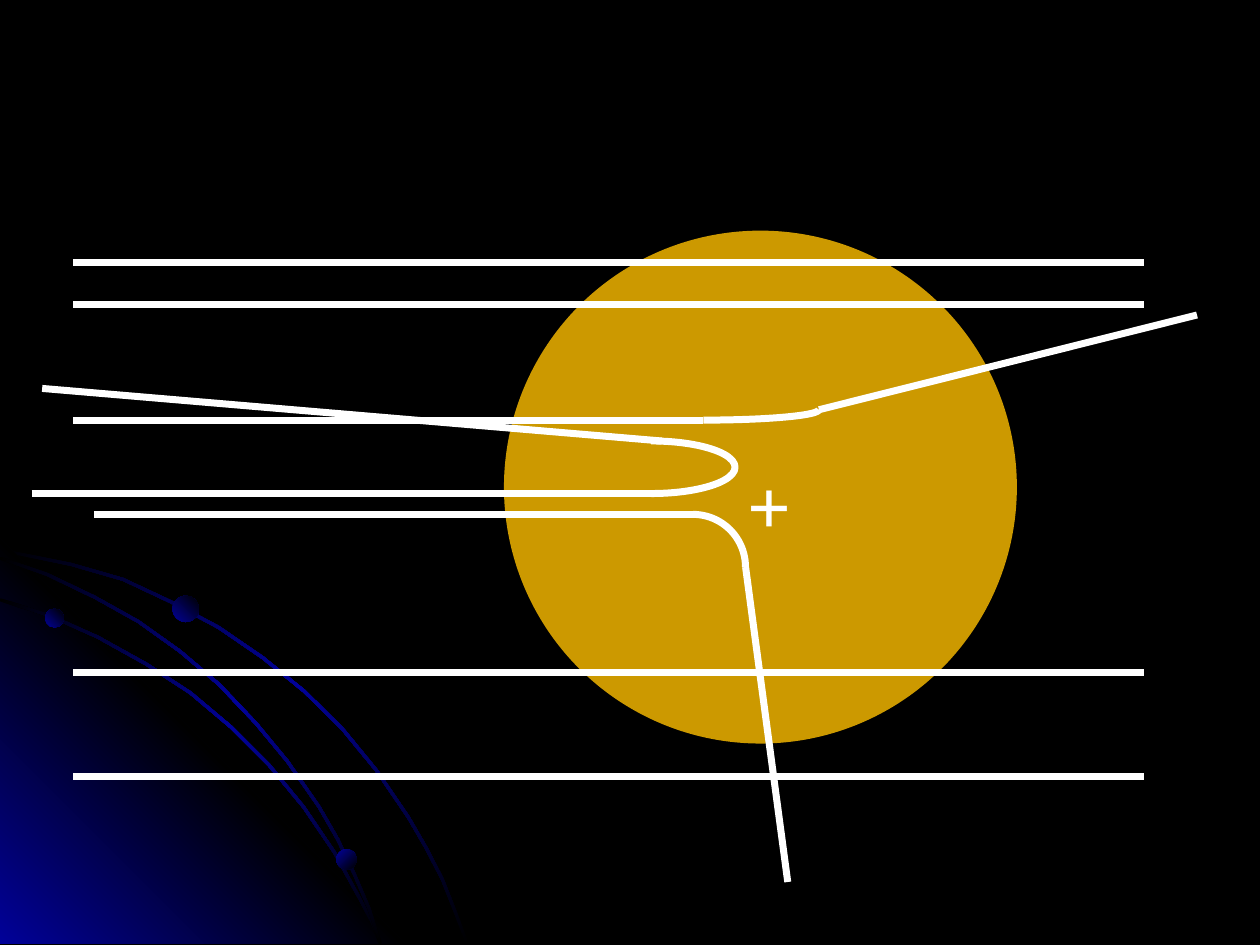
"""Charged particle paths through a positive sphere, drawn on a dark orbit background."""
from dataclasses import dataclass
from math import hypot

from lxml.etree import SubElement
from pptx import Presentation
from pptx.dml.color import RGBColor
from pptx.enum.shapes import MSO_CONNECTOR, MSO_SHAPE
from pptx.enum.text import MSO_ANCHOR, PP_ALIGN
from pptx.oxml.ns import qn
from pptx.util import Cm, Pt


@dataclass(frozen=True)
class Theme:
    black: str = "000000"
    blue: str = "010199"
    gold: str = "CC9900"
    white: str = "FFFFFF"
    font: str = "Times New Roman"
    sign_size: int = 44
    path_width: int = 4


class Sketch:
    def __init__(self, slide, theme):
        self.s = slide
        self.theme = theme

    def background(self, color):
        fill = self.s.background.fill
        fill.solid()
        fill.fore_color.rgb = RGBColor.from_string(color)

    def solid(self, sp, color):
        sp.shadow.inherit = False
        sp.line.fill.background()
        sp.fill.solid()
        sp.fill.fore_color.rgb = RGBColor.from_string(color)

    def gradient(self, sp, colors, angle):
        sp.shadow.inherit = False
        sp.line.fill.background()
        sp.fill.gradient()
        sp.fill.gradient_angle = 360 - angle
        stops = next(sp._element.iter(qn("a:gsLst")))
        for gs in list(stops):
            stops.remove(gs)
        for i, color in enumerate(colors):
            pos = 100000 * i // (len(colors) - 1)
            gs = SubElement(stops, qn("a:gs"), pos=str(pos))
            SubElement(gs, qn("a:srgbClr"), val=color)

    def stroke(self, sp):
        sp.line.color.rgb = RGBColor.from_string(self.theme.white)
        sp.line.width = Pt(self.theme.path_width)

    def shape(self, kind, x, y, w, h):
        return self.s.shapes.add_shape(kind, Cm(x), Cm(y), Cm(w), Cm(h))

    def polygon(self, points, colors, angle):
        start, *rest = [(Cm(x), Cm(y)) for x, y in points]
        builder = self.s.shapes.build_freeform(*start)
        builder.add_line_segments(rest, close=True)
        self.gradient(builder.convert_to_shape(), colors, angle)

    def orbit(self, points, half=0.03):
        outer, inner = [], []
        for i, (x, y) in enumerate(points):
            x0, y0 = points[max(i - 1, 0)]
            x1, y1 = points[min(i + 1, len(points) - 1)]
            length = hypot(x1 - x0, y1 - y0)
            dx, dy = half * (y1 - y0) / length, half * (x1 - x0) / length
            outer.append((x + dx, y - dy))
            inner.append((x - dx, y + dy))
        t = self.theme
        self.polygon(outer + inner[::-1], (t.black, t.blue, t.black), 45)

    def planet(self, x, y, size, angle):
        sp = self.shape(MSO_SHAPE.OVAL, x, y, size, size)
        self.gradient(sp, (self.theme.blue, self.theme.black), angle)

    def disc(self, x, y, size):
        self.solid(self.shape(MSO_SHAPE.OVAL, x, y, size, size), self.theme.gold)

    def sign(self, text, x, y, w, h):
        sp = self.shape(MSO_SHAPE.RECTANGLE, x, y, w, h)
        self.solid(sp, self.theme.gold)
        tf = sp.text_frame
        tf.text = text
        tf.word_wrap = True
        tf.vertical_anchor = MSO_ANCHOR.TOP
        p = tf.paragraphs[0]
        p.alignment = PP_ALIGN.LEFT
        font = p.runs[0].font
        font.name, font.size, font.bold = self.theme.font, Pt(self.theme.sign_size), True
        font.color.rgb = RGBColor.from_string(self.theme.white)

    def line(self, x0, y0, x1, y1):
        cx = self.s.shapes.add_connector(
            MSO_CONNECTOR.STRAIGHT, Cm(x0), Cm(y0), Cm(x1), Cm(y1))
        self.stroke(cx)
        SubElement(cx._element.spPr, qn("a:effectLst"))

    def arc(self, cx, cy, rx, ry, start, end):
        sp = self.shape(MSO_SHAPE.ARC, cx - rx, cy - ry, 2 * rx, 2 * ry)
        sp.shadow.inherit = False
        sp.fill.background()
        self.stroke(sp)
        sp.adjustments[0] = start * 0.6
        sp.adjustments[1] = end * 0.6


OUTER_ORBIT = [
    (0, 11.09), (0.71, 11.23), (1.44, 11.38), (2.48, 11.68), (3.44, 12.13),
    (4.41, 12.65), (5.3, 13.26), (6.13, 13.93), (6.9, 14.69), (7.59, 15.53),
    (8.23, 16.47), (8.59, 17.09), (8.92, 17.73), (9.17, 18.36), (9.42, 19.02)]
INNER_ORBIT = [
    (0, 12.09), (1.02, 12.42), (1.98, 12.85), (2.95, 13.39), (3.84, 13.97),
    (4.66, 14.66), (5.42, 15.42), (6.12, 16.27), (6.74, 17.18), (7.25, 18.11),
    (7.49, 18.57), (7.67, 19.02)]
MIDDLE_ORBIT = [
    (0, 11.25), (0.95, 11.58), (1.91, 12.04), (2.79, 12.53), (3.63, 13.13),
    (4.42, 13.8), (5.16, 14.58), (5.79, 15.34), (6.43, 16.26), (6.81, 16.92),
    (7.14, 17.61), (7.44, 18.31), (7.67, 19.02)]


def main():
    prs = Presentation()
    prs.slide_width, prs.slide_height = Cm(25.4), Cm(19.05)
    theme = Theme()
    sketch = Sketch(prs.slides.add_slide(prs.slide_layouts[6]), theme)

    sketch.background(theme.black)
    sketch.orbit(OUTER_ORBIT)
    glow = [(8.18, 19.03), (0, 19.03), (0, 10.85)]
    sketch.polygon(glow, (theme.blue, theme.black, theme.blue), 315)
    sketch.orbit(INNER_ORBIT)
    sketch.orbit(MIDDLE_ORBIT)
    for planet in ((0.91, 12.27, 0.38, 315), (6.78, 17.12, 0.41, 45),
                   (3.48, 12.01, 0.53, 315)):
        sketch.planet(*planet)

    sketch.disc(10.16, 4.65, 10.34)
    sketch.sign("+", 14.81, 9.09, 1.27, 2.11)

    for y in (5.29, 6.14, 13.55, 15.66):
        sketch.line(1.48, y, 23.07, y)

    sketch.line(1.9, 10.37, 13.97, 10.37)
    sketch.arc(13.97, 11.43, 1.06, 1.06, 270, 0)
    sketch.line(15.03, 11.43, 15.88, 17.78)

    sketch.line(1.48, 8.47, 14.18, 8.47)
    sketch.arc(14.18, 8.26, 2.33, 0.21, 0, 90)
    sketch.line(16.51, 8.26, 24.13, 6.35)

    sketch.line(0.85, 7.83, 13.34, 8.89)
    sketch.arc(13.13, 9.42, 1.69, 0.53, 270, 90)
    sketch.line(0.64, 9.95, 13.34, 9.95)

    prs.save("out.pptx")


if __name__ == "__main__":
    main()
